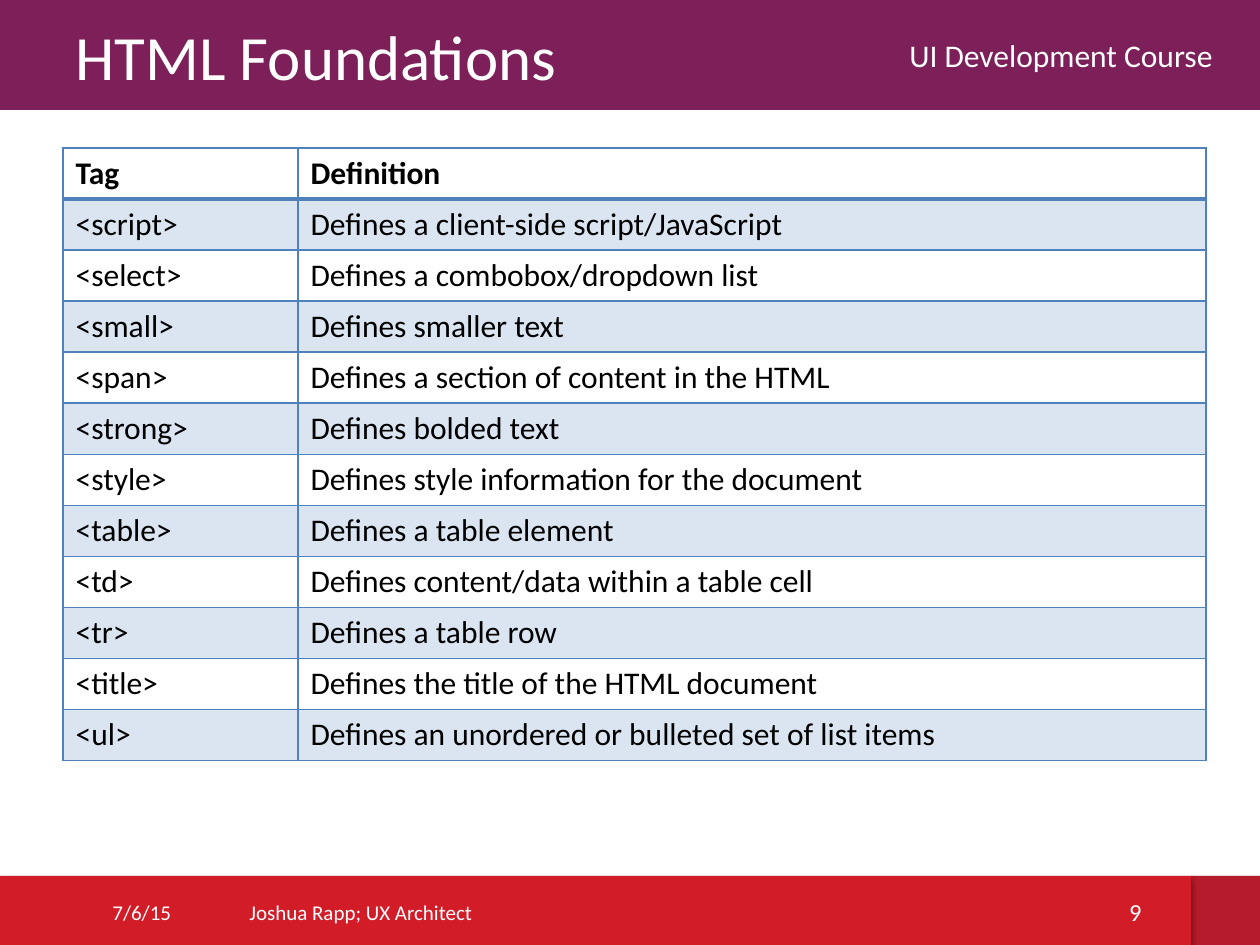
import pptx
import pptx.util
import pptx.dml.color
import pptx.enum.shapes
import pptx.enum.text
import pptx.oxml
import pptx.oxml.ns

SCALE = 914400 / 126
COLORS = {"plum": "7D2059", "red": "D21D29", "dark": "B51B2A",
          "blue": "4F81BD", "white": "FFFFFF", "black": "000000"}
NS = pptx.oxml.ns.nsdecls("a")
RGB = pptx.dml.color.RGBColor.from_string
ALIGN = pptx.enum.text.PP_ALIGN
ANCHOR = pptx.enum.text.MSO_ANCHOR


def emu(*px):
    return [pptx.util.Emu(round(n * SCALE)) for n in px]


def style(para, size, color, bold=False):
    font = para.font
    font.name = "Calibri"
    font.size = pptx.util.Pt(size)
    font.bold = bold
    font.color.rgb = RGB(COLORS[color])


deck = pptx.Presentation()
deck.slide_width, deck.slide_height = emu(1260, 945)
slide = deck.slides.add_slide(deck.slide_layouts[6])

# Header and footer bars
bars = [
    ((1191, 876, 69, 69), "dark", True),
    ((0, 876, 1191, 69), "red", True),
    ((0, 0, 1260, 110), "plum", False),
]
for box, color, shaded in bars:
    bar = slide.shapes.add_shape(pptx.enum.shapes.MSO_SHAPE.RECTANGLE, *emu(*box))
    bar.fill.solid()
    bar.fill.fore_color.rgb = RGB(COLORS[color])
    bar.line.fill.background()
    bar.shadow.inherit = False
    if shaded:
        effects = bar._element.spPr.find(pptx.oxml.ns.qn("a:effectLst"))
        effects.append(pptx.oxml.parse_xml(
            f'<a:outerShdw {NS} blurRad="39370" dist="22860" dir="5400000" rotWithShape="0">'
            f'<a:srgbClr val="{COLORS["black"]}"><a:alpha val="35000"/></a:srgbClr>'
            '</a:outerShdw>'))

# Header and footer text
labels = [
    ("HTML Foundations", (63, 19, 512, 72), 36, ALIGN.LEFT),
    ("UI Development Course", (818, 29, 407, 51), 18, ALIGN.RIGHT),
    ("7/6/15", (100, 887, 105, 51), 12, ALIGN.LEFT),
    ("Joshua Rapp; UX Architect", (237, 887, 479, 51), 12, ALIGN.LEFT),
    ("9", (1099, 886, 55, 51), 14, ALIGN.RIGHT),
]
for text, box, size, align in labels:
    frame = slide.shapes.add_textbox(*emu(*box)).text_frame
    frame.word_wrap = True
    frame.vertical_anchor = ANCHOR.MIDDLE
    para = frame.paragraphs[0]
    para.text = text
    para.alignment = align
    style(para, size, "white")

# Table of tags
rows = [
    ("Tag", "Definition"),
    ("<script>", "Defines a client-side script/JavaScript"),
    ("<select>", "Defines a combobox/dropdown list"),
    ("<small>", "Defines smaller text"),
    ("<span>", "Defines a section of content in the HTML"),
    ("<strong>", "Defines bolded text"),
    ("<style>", "Defines style information for the document"),
    ("<table>", "Defines a table element"),
    ("<td>", "Defines content/data within a table cell"),
    ("<tr>", "Defines a table row"),
    ("<title>", "Defines the title of the HTML document"),
    ("<ul>", "Defines an unordered or bulleted set of list items"),
]
table = slide.shapes.add_table(len(rows), 2, *emu(63, 148, 1143, 613)).table
table.first_row = False
table.horz_banding = False
for col, width in zip(table.columns, emu(235, 908)):
    col.width = width

for r, row in enumerate(rows):
    for c, text in enumerate(row):
        cell = table.cell(r, c)
        props = cell._tc.get_or_add_tcPr()
        for side in "LRTB":
            # The rule below the header row is twice as thick
            thick = (r, side) in ((0, "B"), (1, "T"))
            props.append(pptx.oxml.parse_xml(
                f'<a:ln{side} {NS} w="{25400 if thick else 12700}">'
                f'<a:solidFill><a:srgbClr val="{COLORS["blue"]}"/></a:solidFill>'
                f'</a:ln{side}>'))
        if r % 2:
            cell.fill.solid()
            cell.fill.fore_color.rgb = RGB(COLORS["blue"])
            tint = props.find(pptx.oxml.ns.qn("a:solidFill"))[0]
            tint.append(pptx.oxml.parse_xml(f'<a:alpha {NS} val="20000"/>'))
        else:
            cell.fill.background()
        para = cell.text_frame.paragraphs[0]
        para.text = text
        style(para, 18, "black", bold=r == 0)

deck.save("out.pptx")
